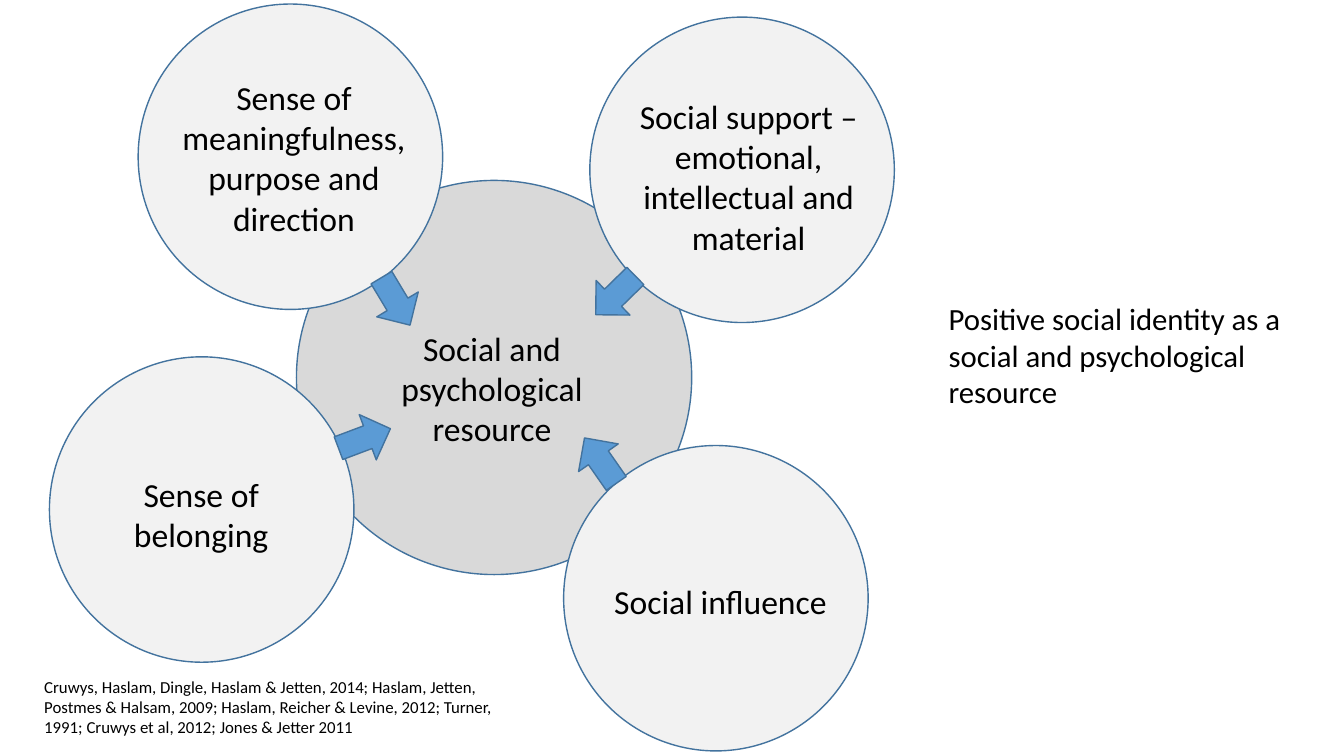
from dataclasses import dataclass

from pptx import Presentation
from pptx.dml.color import RGBColor
from pptx.enum.shapes import MSO_SHAPE
from pptx.enum.text import MSO_AUTO_SIZE, PP_ALIGN
from pptx.shapes.autoshape import Shape
from pptx.slide import Slide
from pptx.util import Pt

SCALE = 9144
OVAL = MSO_SHAPE.OVAL
ARROW = MSO_SHAPE.RIGHT_ARROW
LEFT = PP_ALIGN.LEFT
CENTER = PP_ALIGN.CENTER
GROW = MSO_AUTO_SIZE.SHAPE_TO_FIT_TEXT
COLORS = {
    "core": "D9D9D9",
    "outer": "F2F2F2",
    "arrow": "5B9BD5",
    "edge": "43739E",
    "text": "000000",
}


@dataclass
class Circle:
    left: int
    top: int
    width: int = 302
    height: int = 303
    color: str = "outer"


@dataclass
class Arrow:
    left: int
    top: int
    angle: float


@dataclass
class Label:
    text: str
    left: int
    top: int
    width: int
    height: int
    size: int = 24
    align: PP_ALIGN = CENTER


CIRCLES = [
    Circle(294, 179, 392, 391, "core"),
    Circle(585, 17),
    Circle(49, 354),
    Circle(137, 4),
    Circle(559, 442),
]
ARROWS = [
    Arrow(365, 275, 59),
    Arrow(568, 433, 235.1),
    Arrow(583, 269, 135.6),
    Arrow(334, 411, 339.4),
]
LABELS = [
    Label("Positive social identity as a social and psychological resource",
          931, 292, 366, 121, 22, LEFT),
    Label("Social and psychological resource", 371, 320, 234, 131),
    Label("Sense of meaningfulness, purpose and direction", 167, 71, 249, 172),
    Label("Social support – emotional, intellectual and material",
          618, 90, 249, 172),
    Label("Social influence", 590, 571, 249, 50),
    Label("Sense of belonging", 75, 465, 249, 91),
    Label("Cruwys, Haslam, Dingle, Haslam & Jetten, 2014; Haslam, Jetten, "
          "Postmes & Halsam, 2009; Haslam, Reicher & Levine, 2012; Turner, "
          "1991; Cruwys et al, 2012; Jones & Jetter 2011",
          34, 666, 495, 71, 12, LEFT),
]


def px(count: int) -> int:
    return count * SCALE


def rgb(name: str) -> RGBColor:
    return RGBColor.from_string(COLORS[name])


def paint(shape: Shape, color: str) -> None:
    shape.shadow.inherit = False
    shape.fill.solid()
    shape.fill.fore_color.rgb = rgb(color)
    shape.line.color.rgb = rgb("edge")
    shape.line.width = Pt(1)


def draw_circle(slide: Slide, item: Circle) -> None:
    shape = slide.shapes.add_shape(
        OVAL, px(item.left), px(item.top), px(item.width), px(item.height))
    paint(shape, item.color)


def draw_arrow(slide: Slide, item: Arrow) -> None:
    shape = slide.shapes.add_shape(
        ARROW, px(item.left), px(item.top), px(55), px(48))
    shape.rotation = item.angle
    paint(shape, "arrow")


def draw_label(slide: Slide, item: Label) -> None:
    box = slide.shapes.add_textbox(
        px(item.left), px(item.top), px(item.width), px(item.height))
    frame = box.text_frame
    frame.word_wrap = True
    frame.auto_size = GROW
    para = frame.paragraphs[0]
    para.alignment = item.align
    run = para.add_run()
    run.text = item.text
    style = {"name": "Calibri", "size": Pt(item.size)}
    for key, value in style.items():
        setattr(run.font, key, value)
    run.font.color.rgb = rgb("text")


def main() -> None:
    deck = Presentation()
    deck.slide_width = px(1333)
    deck.slide_height = px(750)
    slide = deck.slides.add_slide(deck.slide_layouts[6])
    for circle in CIRCLES:
        draw_circle(slide, circle)
    for arrow in ARROWS:
        draw_arrow(slide, arrow)
    for label in LABELS:
        draw_label(slide, label)
    deck.save("out.pptx")


if __name__ == "__main__":
    main()
